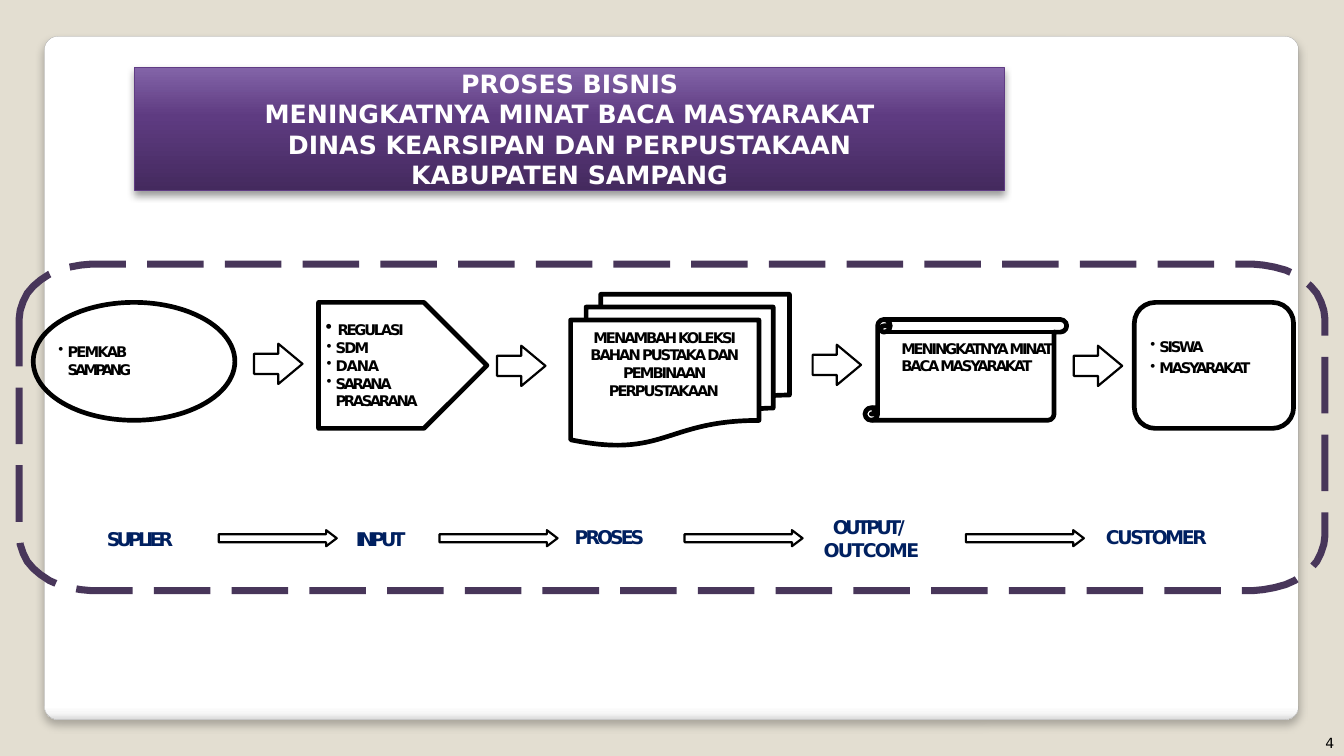
from copy import deepcopy
from math import cos, radians, sin

from lxml.etree import SubElement
from pptx import Presentation
from pptx.dml.color import RGBColor
from pptx.enum.dml import MSO_LINE
from pptx.enum.shapes import MSO_SHAPE
from pptx.enum.text import MSO_ANCHOR, PP_ALIGN
from pptx.oxml.ns import qn
from pptx.util import Pt

PX = 9144  # 100 px to the inch
BLACK, WHITE, NAVY, PLUM = "000000", "FFFFFF", "002060", "48365A"
rgb = RGBColor.from_string

deck = Presentation()
deck.slide_width, deck.slide_height = 1333 * PX, 750 * PX
slide = deck.slides.add_slide(deck.slide_layouts[6])
slide.background.fill.solid()
slide.background.fill.fore_color.rgb = rgb("E3DED1")
shapes = slide.shapes


def draw(kind, box, line, width, fill=None):
    shape = shapes.add_shape(kind, *[n * PX for n in box])
    shape.shadow.inherit = False
    shape.line.color.rgb = rgb(line)
    shape.line.width = Pt(width)
    if fill:
        shape.fill.solid()
        shape.fill.fore_color.rgb = rgb(fill)
    else:
        shape.fill.background()
    return shape


def write(frame, items, size, color, align=PP_ALIGN.LEFT, bold=True):
    """Fill a frame with (text, run spacings, space before, left, indent, bullet %)."""
    frame.word_wrap = True
    frame.vertical_anchor = MSO_ANCHOR.TOP
    frame.margin_left = frame.margin_right = frame.margin_bottom = 0
    frame.margin_top = PX
    for i, (text, gaps, before, left, indent, bullet) in enumerate(items):
        para = frame.add_paragraph() if i else frame.paragraphs[0]
        para.text = text
        para.alignment = align
        para.space_before = Pt(before)
        for run, gap in zip(para.runs, gaps):
            run.font.name = "DejaVu Sans"
            run.font.size = Pt(size)
            run.font.bold = bold
            run.font.color.rgb = rgb(color)
            run.font._element.set("spc", str(gap))
        for br in para._p.findall(qn("a:br")):
            br.append(deepcopy(para.runs[0].font._element))
        props = para._p.get_or_add_pPr()
        props.set("marL", str(left * PX))
        props.set("indent", str(indent * PX))
        if bullet:
            SubElement(props, qn("a:buSzPct")).set("val", str(bullet * 1000))
            SubElement(props, qn("a:buChar")).set("char", "•")


# Panel and title banner share a gradient and a soft shadow
panel = draw(MSO_SHAPE.ROUNDED_RECTANGLE, (44, 36, 1244, 678), "A4A4A4", 0.16)
panel.adjustments[0] = 0.02

# Flow of figures with their texts
figures = [
    (MSO_SHAPE.FLOWCHART_MULTIDOCUMENT, (566, 292, 217, 150), (583, 325, 150, 72),
     PP_ALIGN.CENTER,
     [("MENAMBAH KOLEKSI BAHAN PUSTAKA DAN PEMBINAAN PERPUSTAKAAN",
       [-140], 0.8, 1, 0, 0)]),
    (MSO_SHAPE.VERTICAL_SCROLL, (858, 317, 200, 100), (893, 336, 157, 54),
     PP_ALIGN.LEFT,
     [("MENINGKATNYA MINAT BACA MASYARAKAT", [-150], 0.8, 1, 0, 0)]),
    (MSO_SHAPE.OVAL, (33, 300, 200, 117), (50, 339, 192, 19), PP_ALIGN.LEFT,
     [("PEMKAB\vSAMPANG", [-130, -210], 0, 17, -9, 100)]),
    (MSO_SHAPE.PENTAGON, (316, 300, 167, 125), (316, 317, 150, 92), PP_ALIGN.LEFT,
     [("REGULASI", [-160], 5.1, 19, -12, 129),
      ("SDM", [-130], 0.7, 17, -9, 100),
      ("DANA", [-80], 0, 17, -9, 100),
      ("SARANA\vPRASARANA", [-170, -170], 0, 17, -9, 100)]),
    (MSO_SHAPE.FLOWCHART_ALTERNATE_PROCESS, (1125, 300, 158, 125),
     (1133, 334, 150, 41), PP_ALIGN.LEFT,
     [(word, [-160], 2.5, 17, -9, 100) for word in ("SISWA", "MASYARAKAT")]),
]
for kind, place, area, align, items in figures:
    draw(kind, place, BLACK, 3.35)
    box = shapes.add_textbox(*[n * PX for n in area])
    write(box.text_frame, items, 10.5, BLACK, align)

# Block arrows between figures, thin arrows between stage names
arrows = [(x, y, 48, 40, 0.6) for x, y in
          ((252, 341), (493, 343), (806, 342), (1065, 343))]
arrows += [(x, 526, 117, 16, 0.66) for x in (217, 436, 679, 958)]
for *place, head in arrows:
    arrow = draw(MSO_SHAPE.RIGHT_ARROW, place, BLACK, 1.56, WHITE)
    arrow.adjustments[0], arrow.adjustments[1] = 0.5, head

# Stage names
stages = [
    ("SUPLIER", (105, 522, 91, 24), [-270], 0),
    ("INPUT", (352, 522, 69, 24), [-270], 0),
    ("PROSES", (569, 521, 91, 24), [-210], 0),
    ("OUTPUT/\vOUTCOME", (816, 511, 126, 46), [-250, -120], 9),
    ("CUSTOMER", (1096, 521, 133, 24), [-170], 0),
]
for name, area, gaps, indent in stages:
    box = shapes.add_textbox(*[n * PX for n in area])
    write(box.text_frame, [(name, gaps, 0.8, 1, indent, 0)], 13.5, NAVY)

# Dashed frame with elliptical corners
corners = [(91, 316, 180), (1242, 316, 270), (1242, 532, 0), (91, 532, 90)]
points = [(round(x + 72 * cos(radians(start + turn))),
           round(y + 54 * sin(radians(start + turn))))
          for x, y, start in corners for turn in range(0, 91, 9)]
path = shapes.build_freeform(*points[0], scale=PX)
path.add_line_segments(points[1:], close=True)
frame = path.convert_to_shape()
frame.shadow.inherit = False
frame.fill.background()
frame.line.color.rgb = rgb(PLUM)
frame.line.width = Pt(5.04)
frame.line.dash_style = MSO_LINE.LONG_DASH

# Title banner
banner = draw(MSO_SHAPE.RECTANGLE, (133, 67, 863, 122), "603C84", 0.75)
titles = ["PROSES BISNIS", "MENINGKATNYA MINAT BACA MASYARAKAT",
          "DINAS KEARSIPAN DAN PERPUSTAKAAN", "KABUPATEN SAMPANG"]
write(banner.text_frame,
      [(line, [0], 0 if i else 0.7, 1, 0, 0) for i, line in enumerate(titles)],
      18, WHITE, PP_ALIGN.CENTER)

looks = [
    (panel, 270, [(0, WHITE), (98, WHITE), (99, "F7F7F7"), (100, "DADADA")], 25, 6, 4),
    (banner, 90, [(0, "442A5E"), (60, "5E3B81"), (100, "8364A8")], 40, 5.2, 3),
]
for shape, angle, stops, alpha, blur, dist in looks:
    shape.fill.gradient()
    shape.fill.gradient_angle = angle
    props = shape._element.spPr
    ramp = props.find(qn("a:gradFill")).find(qn("a:gsLst"))
    for stop in list(ramp):
        ramp.remove(stop)
    for pos, color in stops:
        stop = SubElement(ramp, qn("a:gs"), pos=str(pos * 1000))
        SubElement(stop, qn("a:srgbClr"), val=color)
    shade = SubElement(props.find(qn("a:effectLst")), qn("a:outerShdw"),
                       blurRad=str(Pt(blur)), dist=str(Pt(dist)),
                       dir="5400000", rotWithShape="0")
    tint = SubElement(shade, qn("a:srgbClr"), val=BLACK)
    SubElement(tint, qn("a:alpha"), val=str(alpha * 1000))

# Page number
page = shapes.add_textbox(1244 * PX, 693 * PX, 89 * PX, 57 * PX).text_frame
write(page, [("4", [0], 0, 0, 0, 0)], 10, BLACK, PP_ALIGN.RIGHT, False)
page.vertical_anchor = MSO_ANCHOR.BOTTOM
page.margin_right, page.margin_bottom = 10 * PX, 5 * PX

deck.save("out.pptx")
